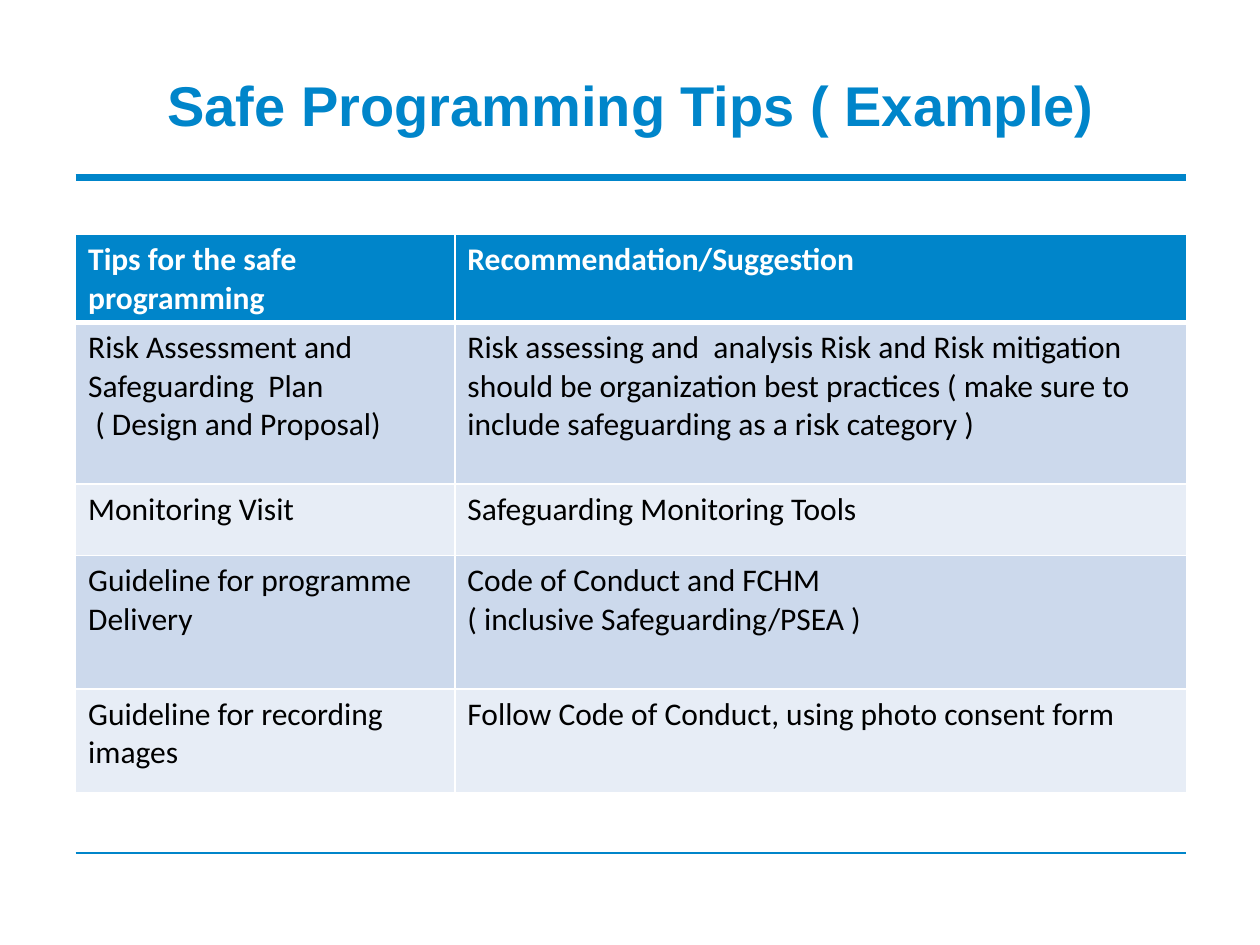
from typing import NamedTuple

from lxml.etree import SubElement
from pptx import Presentation
from pptx.dml.color import RGBColor
from pptx.enum.shapes import MSO_CONNECTOR as Conn
from pptx.enum.text import MSO_ANCHOR as Anchor, PP_ALIGN as Align
from pptx.oxml.ns import qn
from pptx.util import Inches, Pt

COLORS = {"blue": "0085CA", "white": "FFFFFF", "black": "000000",
          "band_dark": "CCD9EC", "band_light": "E7EDF6"}
LEFT, WIDTH = 0.6, 8.82
COL_WIDTHS = (3.01, 5.81)
TITLE_FONT = {"name": "Arial", "size": Pt(32), "bold": True}
HEAD_FONT = {"name": "Calibri", "size": Pt(18), "bold": True}
BODY_FONT = HEAD_FONT | {"bold": False}


class Rule(NamedTuple):
    y: float
    weight: float


class Tip(NamedTuple):
    height: float
    topic: str
    advice: str


RULES = (Rule(1.41, 4), Rule(6.77, 1))
TIPS = (
    Tip(0.7, "Tips for the safe programming", "Recommendation/Suggestion"),
    Tip(1.28, "Risk Assessment and Safeguarding  Plan\n ( Design and Proposal)",
        "Risk assessing and  analysis Risk and Risk mitigation should be "
        "organization best practices ( make sure to include safeguarding "
        "as a risk category )"),
    Tip(0.57, "Monitoring Visit", "Safeguarding Monitoring Tools"),
    Tip(1.06, "Guideline for programme Delivery",
        "Code of Conduct and FCHM\n( inclusive Safeguarding/PSEA )"),
    Tip(0.82, "Guideline for recording images",
        "Follow Code of Conduct, using photo consent form"),
)


def rgb(name: str) -> RGBColor:
    return RGBColor.from_string(COLORS[name])


def write(tf, text: str, font: dict, color: str) -> None:
    tf.text = text
    for p in tf.paragraphs:
        for r in p.runs:
            for key, value in font.items():
                setattr(r.font, key, value)
            r.font.color.rgb = rgb(color)


def draw_rule(s, rule: Rule) -> None:
    line = s.shapes.add_connector(Conn.STRAIGHT, Inches(LEFT), Inches(rule.y),
                                  Inches(9.41), Inches(rule.y))
    line.line.color.rgb = rgb("blue")
    line.line.width = Pt(rule.weight)
    SubElement(line._element.spPr, qn("a:effectLst"))


def draw_title(s, text: str) -> None:
    sp = s.shapes.add_textbox(Inches(LEFT), Inches(0.42), Inches(WIDTH), Inches(0.88))
    tf = sp.text_frame
    layout = dict.fromkeys(("margin_left", "margin_right", "margin_top", "margin_bottom"), 0)
    layout |= {"word_wrap": True, "vertical_anchor": Anchor.MIDDLE}
    for key, value in layout.items():
        setattr(tf, key, value)
    write(tf, text, TITLE_FONT, "blue")
    p = tf.paragraphs[0]
    p.alignment, p.line_spacing = Align.CENTER, Pt(34)


def set_borders(cell, weights: dict[str, float]) -> None:
    tc_pr = cell._tc.get_or_add_tcPr()
    for i, (side, weight) in enumerate(weights.items()):
        ln = SubElement(tc_pr, qn(f"a:ln{side}"), w=str(Pt(weight)))
        fill = SubElement(ln, qn("a:solidFill"))
        SubElement(fill, qn("a:srgbClr"), val=COLORS["white"])
        tc_pr.insert(i, ln)


def draw_table(s, tips: tuple[Tip, ...]) -> None:
    height = sum(tip.height for tip in tips)
    table = s.shapes.add_table(len(tips), len(COL_WIDTHS), Inches(LEFT), Inches(1.86),
                               Inches(WIDTH), Inches(height)).table
    for col, width in zip(table.columns, COL_WIDTHS):
        col.width = Inches(width)
    for i, tip in enumerate(tips):
        table.rows[i].height = Inches(tip.height)
        band = "blue" if i == 0 else "band_dark" if i % 2 else "band_light"
        font, color = (BODY_FONT, "black") if i else (HEAD_FONT, "white")
        borders = {"L": 1, "R": 1, "T": 3 if i == 1 else 1, "B": 1 if i else 3}
        for cell, text in zip(table.rows[i].cells, (tip.topic, tip.advice)):
            write(cell.text_frame, text, font, color)
            cell.fill.solid()
            cell.fill.fore_color.rgb = rgb(band)
            set_borders(cell, borders)


def main() -> None:
    """Build the safe programming tips slide."""
    prs = Presentation()
    prs.slide_width, prs.slide_height = Inches(10), Inches(7.5)
    s = prs.slides.add_slide(prs.slide_layouts[6])
    for rule in RULES:
        draw_rule(s, rule)
    draw_title(s, "Safe Programming Tips ( Example)")
    draw_table(s, TIPS)
    prs.save("out.pptx")


if __name__ == "__main__":
    main()
